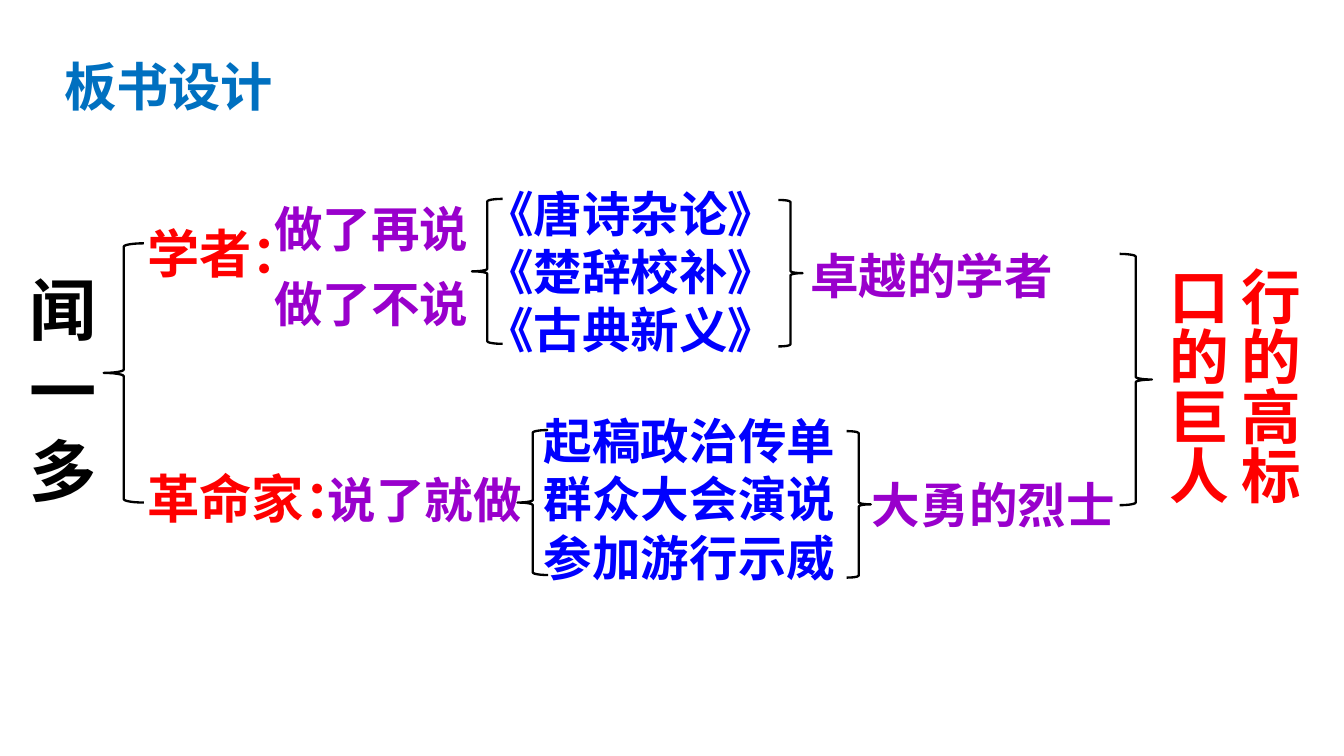
from dataclasses import dataclass

import pptx
import pptx.dml.color
import pptx.enum.shapes
import pptx.enum.text
import pptx.oxml
import pptx.oxml.ns
import pptx.util
from pptx.util import Cm

SHAPES = pptx.enum.shapes.MSO_SHAPE


@dataclass(frozen=True)
class Theme:
    font: str = "Noto Sans CJK SC"
    black: str = "000000"
    red: str = "FF0000"
    purple: str = "9900CC"
    blue: str = "0000FF"
    heading: str = "0070C0"
    subject_size: int = 36
    summary_size: int = 32
    role_size: int = 28
    detail_size: int = 26
    brace_width: float = 1.25


THEME = Theme()


def rgb(value):
    return pptx.dml.color.RGBColor.from_string(value)


def format_span(span, color, size):
    """Set the Latin and the East Asian typeface along with size and colour."""
    span.font.name = THEME.font
    span.font.size = pptx.util.Pt(size)
    span.font.bold = True
    span.font.color.rgb = rgb(color)
    east_asian = pptx.oxml.parse_xml(
        f'<a:ea {pptx.oxml.ns.nsdecls("a")} typeface="{THEME.font}"/>')
    span.font._element.find(pptx.oxml.ns.qn("a:latin")).addnext(east_asian)


def add_text(page, text, left, top, width, height, *, color=THEME.purple,
             size=THEME.detail_size, wrap=False, spacing=None,
             centered=False, vertical=False):
    """Add a text box with one paragraph for each line of text."""
    box = page.shapes.add_textbox(Cm(left), Cm(top), Cm(width), Cm(height))
    frame = box.text_frame
    frame.word_wrap = wrap
    frame.auto_size = pptx.enum.text.MSO_AUTO_SIZE.SHAPE_TO_FIT_TEXT
    if vertical:
        frame._txBody.bodyPr.set("vert", "eaVert")
    for index, line in enumerate(text.split("\n")):
        para = frame.add_paragraph() if index else frame.paragraphs[0]
        if spacing:
            para.line_spacing = spacing
        if centered:
            para.alignment = pptx.enum.text.PP_ALIGN.CENTER
        span = para.add_run()
        span.text = line
        format_span(span, color, size)


def add_brace(page, kind, left, top, width, height):
    brace = page.shapes.add_shape(kind, Cm(left), Cm(top), Cm(width), Cm(height))
    brace.shadow.inherit = False
    brace.fill.background()
    brace.line.color.rgb = rgb(THEME.black)
    brace.line.width = pptx.util.Pt(THEME.brace_width)


def add_scholar_branch(page):
    add_text(page, "学者：", 2.54, 4.06, 3.53, 1.45,
             color=THEME.red, size=THEME.role_size)
    add_text(page, "做了再说\n做了不说", 4.93, 3.3, 4.22, 3, spacing=1.3)
    add_text(page, "《唐诗杂论》\n《楚辞校补》\n《古典新义》",
             8.92, 3.35, 6.05, 3.58, color=THEME.blue, wrap=True)
    add_text(page, "卓越的学者", 15.06, 4.19, 5.16, 1.7, spacing=1.3)
    add_brace(page, SHAPES.LEFT_BRACE, 8.92, 3.76, 0.58, 2.74)
    add_brace(page, SHAPES.RIGHT_BRACE, 14.71, 3.78, 0.46, 2.77)


def add_revolutionary_branch(page):
    add_text(page, "革命家：", 2.54, 8.69, 4.52, 1.45,
             color=THEME.red, size=THEME.role_size)
    add_text(page, "说了就做", 5.94, 8.76, 4.24, 1.37)
    add_text(page, "起稿政治传单\n群众大会演说\n参加游行示威",
             10.03, 7.65, 6.1, 3.58, color=THEME.blue)
    add_text(page, "大勇的烈士", 16.23, 8.53, 5.16, 1.55, spacing=1.3)
    add_brace(page, SHAPES.LEFT_BRACE, 9.78, 8.13, 0.58, 2.74)
    add_brace(page, SHAPES.RIGHT_BRACE, 16, 8.15, 0.46, 2.77)


def main():
    deck = pptx.Presentation()
    deck.slide_width, deck.slide_height = Cm(25.4), Cm(14.29)
    page = deck.slides.add_slide(deck.slide_layouts[6])

    add_text(page, "板书设计", 0.81, 0.91, 4.75, 1.45, color=THEME.heading,
             size=THEME.role_size, wrap=True, centered=True)
    add_text(page, "闻一多", 0.3, 4.95, 2.59, 4.88, color=THEME.black,
             size=THEME.subject_size, wrap=True)
    add_brace(page, SHAPES.LEFT_BRACE, 1.96, 4.6, 0.76, 4.9)
    add_scholar_branch(page)
    add_revolutionary_branch(page)
    add_brace(page, SHAPES.RIGHT_BRACE, 21.16, 4.8, 0.61, 4.75)
    add_text(page, "行的高标口的巨人", 21.54, 4.8, 3.25, 5.28, color=THEME.red,
             size=THEME.summary_size, wrap=True, vertical=True)

    deck.save("out.pptx")


if __name__ == "__main__":
    main()
